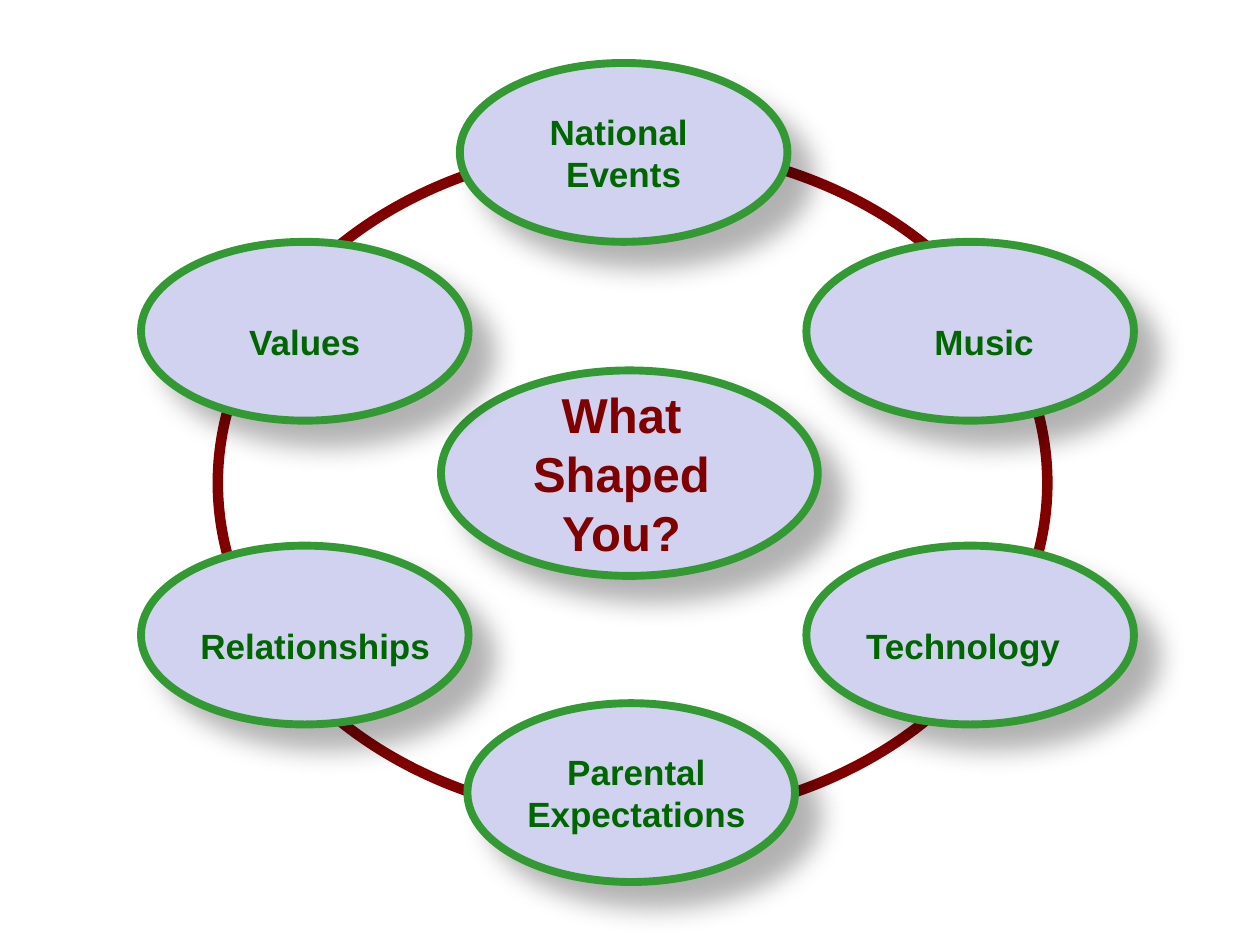
from dataclasses import dataclass

from lxml.etree import SubElement
from pptx import Presentation
from pptx.dml.color import RGBColor
from pptx.enum.shapes import MSO_SHAPE
from pptx.enum.text import MSO_ANCHOR, PP_ALIGN
from pptx.oxml.ns import qn
from pptx.util import Pt


@dataclass(frozen=True)
class Theme:
    font: str = "Arial"
    maroon: str = "800000"
    lavender: str = "D1D1F0"
    border: str = "339933"
    green: str = "006600"
    shadow: str = "000000"
    topic_size: int = 20
    hub_size: int = 28
    ring_width: float = 6
    border_width: float = 4.5
    inset: float = 10


class SlideBuilder:
    def __init__(self, page, theme):
        self.page = page
        self.theme = theme

    def ellipse(self, left, top, width, height, line_color, line_width):
        oval = self.page.shapes.add_shape(
            MSO_SHAPE.OVAL, Pt(left), Pt(top), Pt(width), Pt(height))
        oval.shadow.inherit = False
        oval.fill.background()
        oval.line.color.rgb = RGBColor.from_string(line_color)
        oval.line.width = Pt(line_width)
        return oval

    def ring(self, left, top, width, height):
        self.ellipse(left, top, width, height, self.theme.maroon, self.theme.ring_width)

    def cast_shadow(self, shape):
        """Soft shadow to the lower right: 15 pt blur, 18 pt away, 30 % opaque."""
        effects = shape.element.spPr.find(qn("a:effectLst"))
        shadow = SubElement(effects, qn("a:outerShdw"), blurRad=str(Pt(15)),
                            dist=str(Pt(18)), dir=str(45 * 60000),
                            algn="ctr", rotWithShape="0")
        color = SubElement(shadow, qn("a:srgbClr"), val=self.theme.shadow)
        SubElement(color, qn("a:alpha"), val="30000")

    def bubble(self, box, text, size, color, shift=0, spacing=1.0):
        """Filled oval; shift moves its centred text sideways."""
        theme = self.theme
        oval = self.ellipse(*box, theme.border, theme.border_width)
        oval.fill.solid()
        oval.fill.fore_color.rgb = RGBColor.from_string(theme.lavender)
        self.cast_shadow(oval)

        frame = oval.text_frame
        frame.text = text
        frame.word_wrap = False
        frame.vertical_anchor = MSO_ANCHOR.MIDDLE
        frame.margin_left = Pt(theme.inset + shift)
        frame.margin_right = Pt(theme.inset - shift)
        for paragraph in frame.paragraphs:
            paragraph.alignment = PP_ALIGN.CENTER
            paragraph.line_spacing = spacing
            for span in paragraph.runs:
                span.font.name = theme.font
                span.font.size = Pt(size)
                span.font.bold = True
                span.font.color.rgb = RGBColor.from_string(color)


def main():
    deck = Presentation()
    deck.slide_width, deck.slide_height = Pt(720), Pt(540)
    theme = Theme()
    builder = SlideBuilder(deck.slides.add_slide(deck.slide_layouts[6]), theme)

    # Ring that links the topics
    builder.ring(124.5, 84, 474, 384)

    # Central question
    builder.bubble((252, 211.7, 215.3, 117.4), "What\vShaped\vYou?",
                   theme.hub_size, theme.maroon, shift=-4.5)

    # Topics around the ring: left, top, text, text shift, line spacing
    left_column, right_column = 80.6, 460.8
    upper_row, lower_row = 138.2, 311.8
    topics = [
        (262.8, 36, "National \nEvents", 0, 1.0),
        (267.1, 401.8, "Parental\nExpectations", 3, 1.0),
        (right_column, upper_row, "Music", 8, 1.5),
        (left_column, upper_row, "Values", 0, 1.5),
        (left_column, lower_row, "Relationships", 6, 1.5),
        (right_column, lower_row, "Technology", -4, 1.5),
    ]
    for left, top, text, shift, spacing in topics:
        builder.bubble((left, top, 187.2, 102.2), text,
                       theme.topic_size, theme.green, shift, spacing)

    deck.save("out.pptx")


if __name__ == "__main__":
    main()
